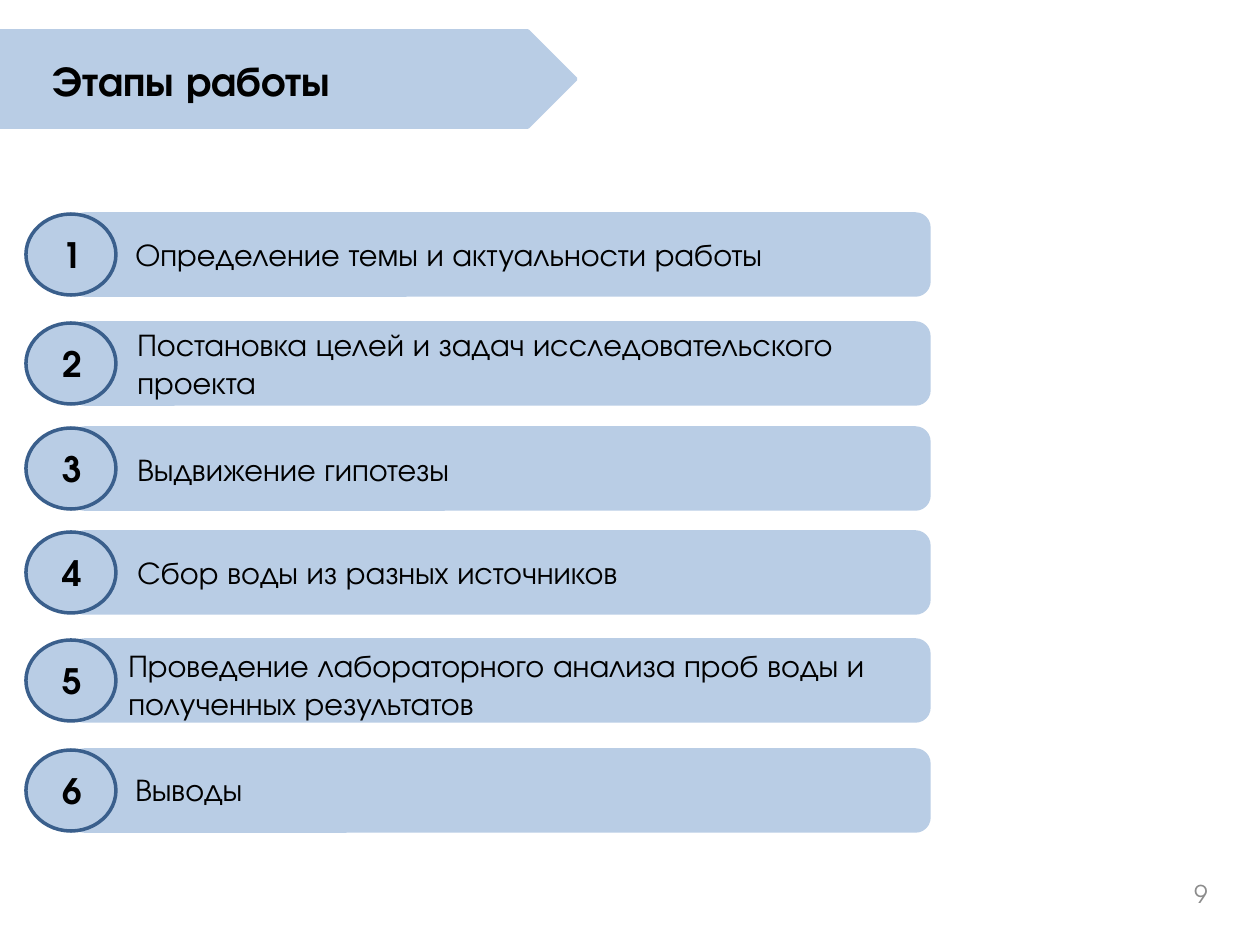
from pptx import Presentation
from pptx.dml.color import RGBColor
from pptx.enum.shapes import MSO_SHAPE as Shape
from pptx.enum.text import MSO_ANCHOR as Anchor, MSO_AUTO_SIZE as Fit, PP_ALIGN as Align
from pptx.util import Pt

SCALE = 914400 // 126
FONT = "TeX Gyre Adventor"
PALE, EDGE, BLACK, GREY = "B9CDE5", "3A5F8C", "000000", "8C8C8C"
ROW_H = 81
TITLE = "Этапы работы"
PAGE = "9"

# row top, label, label box (left, top, width, height)
STEPS = [
    (214, "Определение темы и актуальности работы", (123, 229, 753, 50)),
    (323, "Постановка целей и задач исследовательского проекта", (125, 319, 823, 89)),
    (428, "Выдвижение гипотезы", (125, 444, 411, 50)),
    (532, "Сбор воды из разных источников", (125, 547, 776, 50)),
    (640, "Проведение лабораторного анализа проб воды и полученных результатов",
     (116, 640, 931, 89)),
    (750, "Выводы", (123, 764, 268, 50)),
]


def px(*vals):
    return [round(v * SCALE) for v in vals]


def color(text):
    return RGBColor.from_string(text)


def draw(parent, kind, box, line=PALE):
    shape = parent.add_shape(kind, *px(*box))
    shape.shadow.inherit = False
    shape.fill.solid()
    shape.fill.fore_color.rgb = color(PALE)
    shape.line.color.rgb = color(line)
    shape.line.width = Pt(2)
    return shape


def write(shape, text, size, bold=False, ink=BLACK, align=Align.LEFT, anchor=Anchor.TOP):
    frame = shape.text_frame
    frame.word_wrap = True
    frame.auto_size = Fit.NONE
    frame.vertical_anchor = anchor
    frame.text = text
    para = frame.paragraphs[0]
    para.alignment = align
    font = para.font
    font.name, font.size, font.bold = FONT, Pt(size), bold
    font.color.rgb = color(ink)


deck = Presentation()
deck.slide_width, deck.slide_height = px(1260, 945)
slide = deck.slides.add_slide(deck.slide_layouts[5])
shapes = slide.shapes

title = shapes.title
title.left, title.top, title.width, title.height = px(40, 48, 481, 63)
write(title, TITLE, 24, bold=True)
arrow = draw(shapes, Shape.PENTAGON, (0, 31, 576, 96))
title._element.addprevious(arrow._element)  # the title stays in front

for num, (top, label, box) in enumerate(STEPS, 1):
    row = shapes.add_group_shape().shapes
    draw(row, Shape.ROUNDED_RECTANGLE, (71, top, 858, ROW_H))
    draw(row, Shape.OVAL, (26, top, 90, ROW_H), EDGE)
    write(shapes.add_textbox(*px(50, top + 13, 42, 55)), str(num), 20, bold=True)
    write(shapes.add_textbox(*px(*box)), label, 18)

write(shapes.add_textbox(*px(926, 869, 294, 50)), PAGE, 14, ink=GREY,
      align=Align.RIGHT, anchor=Anchor.MIDDLE)

deck.save("out.pptx")
